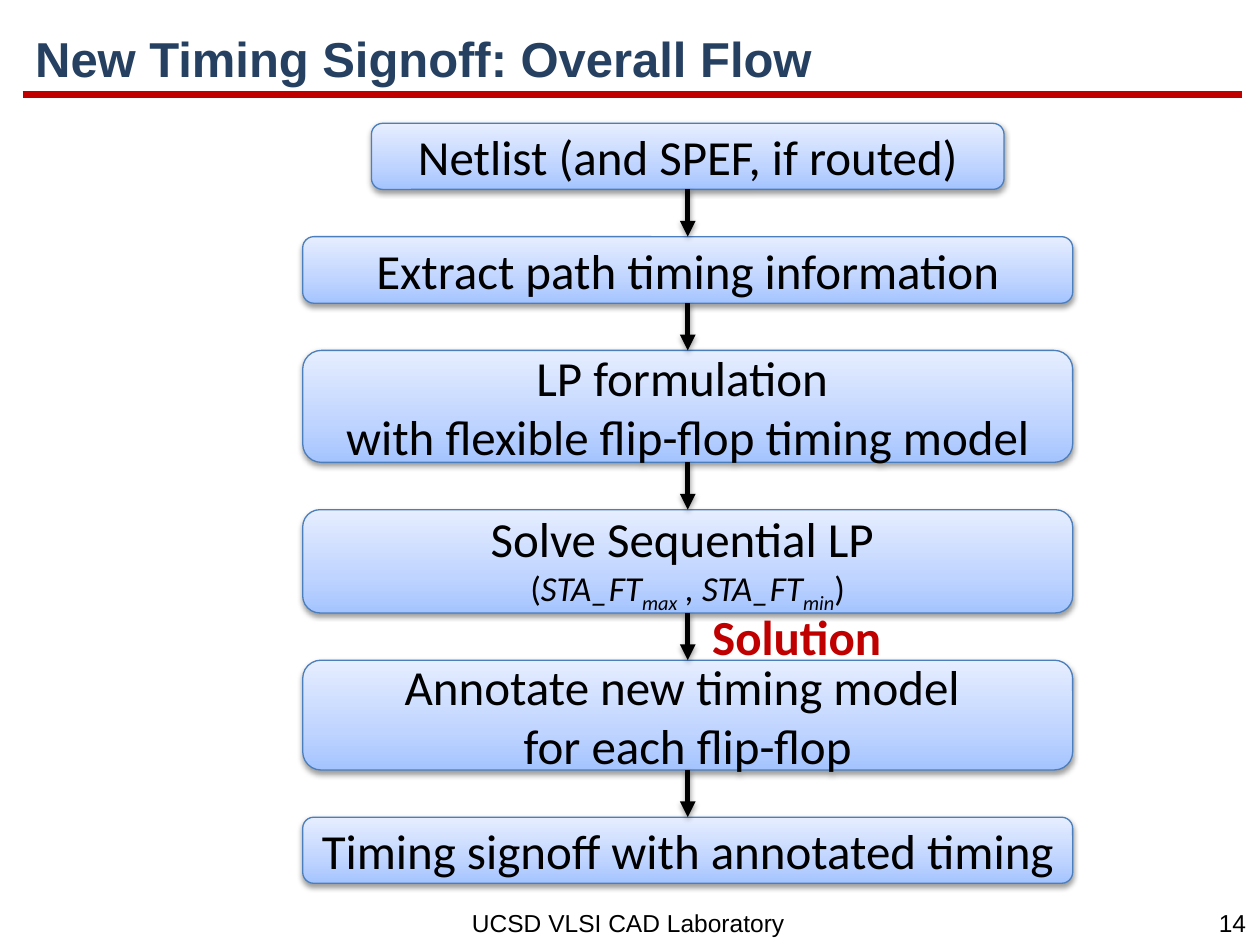
from copy import deepcopy
from lxml.etree import SubElement as Sub
from pptx import Presentation
from pptx.dml.color import RGBColor as RGB
from pptx.enum.shapes import MSO_CONNECTOR as LINK, MSO_SHAPE as SHAPE
from pptx.enum.text import MSO_ANCHOR as ANCHOR, MSO_AUTO_SIZE as AUTO, PP_ALIGN as ALIGN
from pptx.oxml.ns import qn
from pptx.util import Pt

HEX = {"title": "254061", "rule": "C00000", "text": "000000", "edge": "4B7EBC",
       "low": "A4C4FF", "mid": "BFD4FF", "high": "E6EEFF"}
STOPS = [("low", 0), ("mid", 0.35), ("high", 1)]
GAP = 27
FTMAX = [("(", ""), ("STA_FT", "i"), ("max", "is"), (" , STA_FT", "i"),
         ("min", "is"), (")", "")]
STEPS = [
    (361.5, 37.75, ["Netlist (and SPEF, if routed)"]),
    (440, 38, ["Extract path timing information"]),
    (440, 64, ["LP formulation ", "with flexible flip-flop timing model"]),
    (440, 59, ["Solve Sequential LP ", FTMAX]),
    (440, 62.75, ["Annotate new timing model ", "for each flip-flop"]),
    (440, 37.75, ["Timing signoff with annotated timing"]),
]


def tint(name):
    """Return the named colour."""
    return RGB.from_string(HEX[name])


def style(font, size, face="Calibri", hue="text", bold=False):
    """Set size, face, colour and weight of a font."""
    font.size, font.name, font.bold = Pt(size), face, bold
    font.color.rgb = tint(hue)


def shade(shape):
    """Add a soft shadow below a shape or connector."""
    glow = Sub(shape._element.spPr, qn("a:effectLst"))
    drop = Sub(glow, qn("a:outerShdw"), blurRad=str(Pt(3.15)), dist=str(Pt(1.57)),
               dir="5400000", rotWithShape="0")
    hue = Sub(drop, qn("a:srgbClr"), val=HEX["text"])
    Sub(hue, qn("a:alpha"), val="38000")


def label(slide, box, text, size, face="Arial", hue="text", bold=False):
    """Place one line of text that does not wrap, centred in its box."""
    frame = slide.shapes.add_textbox(*map(Pt, box)).text_frame
    frame.word_wrap, frame.auto_size = False, AUTO.SHAPE_TO_FIT_TEXT
    frame.text = text
    para = frame.paragraphs[0]
    para.alignment = ALIGN.CENTER
    style(para.runs[0].font, size, face, hue, bold)
    return frame


def head(slide, box):
    """Place the title and the red rule beneath it."""
    left, top, wide, high = box
    frame = label(slide, box, "New Timing Signoff: Overall Flow", 28, hue="title", bold=True)
    frame.auto_size, frame.word_wrap = AUTO.NONE, True
    frame.vertical_anchor = ANCHOR.MIDDLE
    para = frame.paragraphs[0]
    para.alignment, para.line_spacing = ALIGN.LEFT, 0.9
    low = top + high - 4.5
    rule = slide.shapes.add_connector(LINK.STRAIGHT, *map(Pt, (left, low, left + wide, low)))
    rule.line.color.rgb, rule.line.width = tint("rule"), Pt(4.5)
    Sub(rule._element.spPr, qn("a:effectLst"))


def write(para, parts):
    """Fill a centred paragraph with a plain line or with marked runs."""
    para.alignment = ALIGN.CENTER
    size = 28 if isinstance(parts, str) else 20
    for text, marks in [(parts, "")] if size == 28 else parts:
        run = para.add_run()
        run.text = text
        style(run.font, size)
        run.font.italic = "i" in marks
        if "s" in marks:
            run._r.get_or_add_rPr().set("baseline", "-25000")


def step(slide, box, lines):
    """Place one rounded step of the flow."""
    shape = slide.shapes.add_shape(SHAPE.ROUNDED_RECTANGLE, *map(Pt, box))
    shape.fill.gradient()
    shape.fill.gradient_angle = 90
    stops = shape._element.spPr.find(".//" + qn("a:gsLst"))
    stops.append(deepcopy(stops[0]))
    for stop, (name, spot) in zip(shape.fill.gradient_stops, STOPS):
        stop.color.rgb, stop.position = tint(name), spot
    shape.line.color.rgb, shape.line.width = tint("edge"), Pt(0.75)
    shade(shape)
    frame = shape.text_frame
    frame.word_wrap, frame.vertical_anchor = False, ANCHOR.MIDDLE
    for num, parts in enumerate(lines):
        write(frame.add_paragraph() if num else frame.paragraphs[0], parts)


def arrow(slide, mid, top):
    """Draw an arrow down across one gap."""
    link = slide.shapes.add_connector(LINK.STRAIGHT, *map(Pt, (mid, top, mid, top + GAP)))
    link.line.color.rgb, link.line.width = tint("text"), Pt(3)
    Sub(link._element.spPr.find(qn("a:ln")), qn("a:tailEnd"), type="triangle")
    shade(link)


def flow(slide, box):
    """Stack the steps in the box, with arrows between them."""
    left, top, wide, _ = box
    mid = left + wide / 2
    ends = []
    for width, high, lines in STEPS:
        step(slide, (mid - width / 2, top, width, high), lines)
        ends.append(top + high)
        top += high + GAP
    for end in ends[:-1]:
        arrow(slide, mid, end)
    label(slide, (mid + 4, ends[3] - 7, 116.5, 41), "Solution", 28, "Calibri", "rule", True)


def foot(slide, box):
    """Place the laboratory name and the page number."""
    left, top, wide, high = box
    label(slide, (left + 260, top, 202, high), "UCSD VLSI CAD Laboratory ", 14)
    label(slide, (left + wide - 31.5, top, 31.5, high), "14", 14)


def main():
    """Build the slide and save it."""
    deck = Presentation()
    deck.slide_width, deck.slide_height = Pt(720), Pt(540)
    slide = deck.slides.add_slide(deck.slide_layouts[6])
    head(slide, (13, 11.5, 697, 47))
    flow(slide, (173, 70.5, 440, 434))
    foot(slide, (0, 515.5, 720, 24.5))
    deck.save("out.pptx")


if __name__ == "__main__":
    main()
